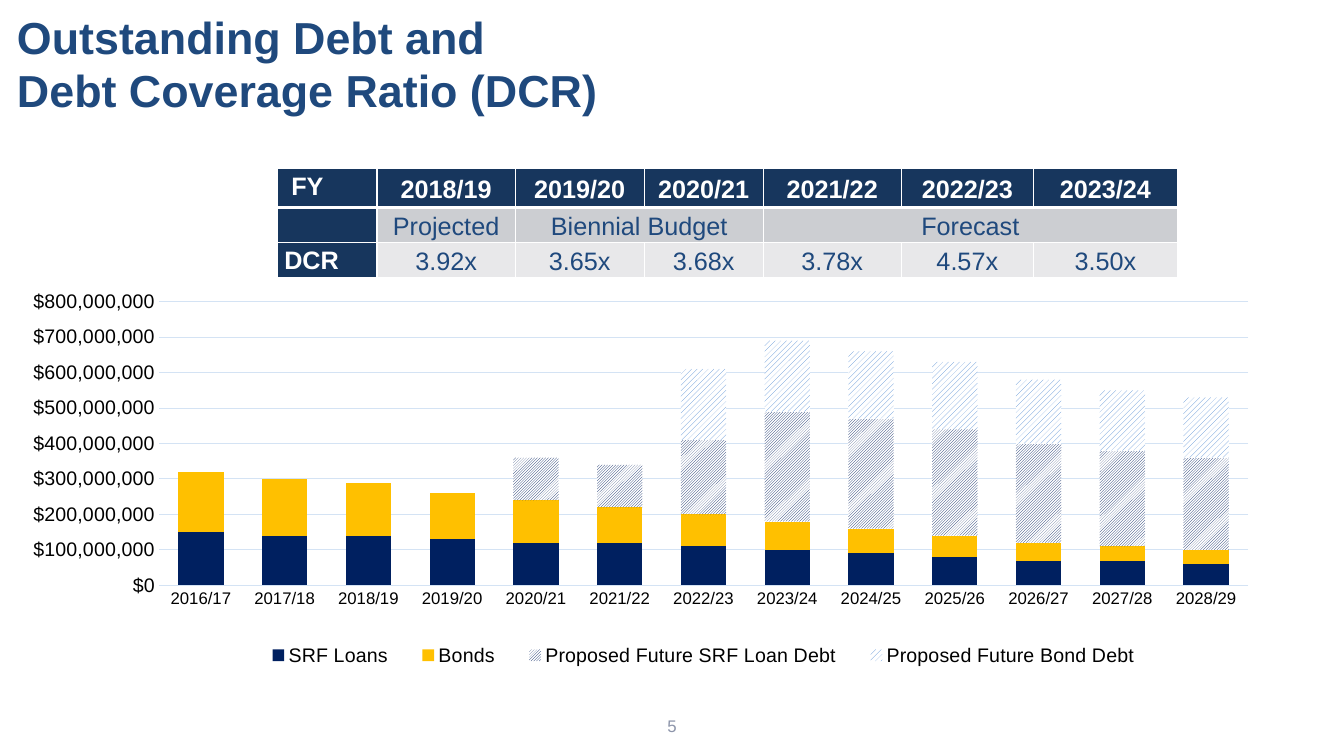
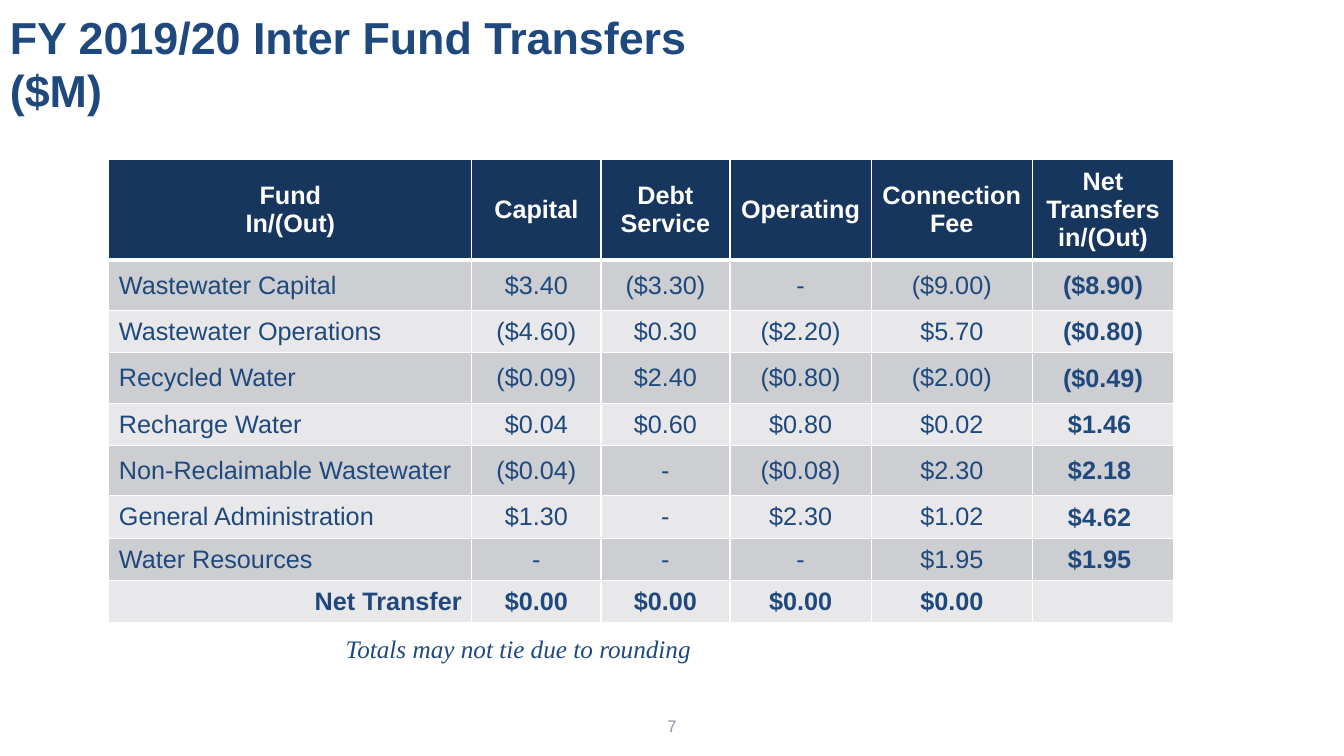
from pptx import Presentation
from pptx.chart.data import CategoryChartData
from pptx.dml.color import RGBColor
from pptx.enum.chart import XL_CHART_TYPE as Chart, XL_LEGEND_POSITION as LegendPos, XL_TICK_MARK as Tick
from pptx.enum.dml import MSO_PATTERN as Pattern
from pptx.enum.text import MSO_ANCHOR as Anchor, PP_ALIGN as Align
from pptx.oxml import parse_xml
from pptx.oxml.ns import nsdecls, qn
from pptx.util import Inches, Pt

COLORS = {
    "blue": "1F497D",
    "navy": "17365D",
    "white": "FFFFFF",
    "black": "000000",
    "band": "CCCED2",
    "light_band": "E8E8EA",
    "page_number": "8D95AA",
    "grid": "D4E3F4",
    "srf": "002060",
    "bonds": "FFC000",
    "future_bonds": "548DD4",
}
FONT = "Arial"
MILLION = 1_000_000

DCR_ROWS = [
    ["\N{NO-BREAK SPACE}FY", "2018/19", "2019/20", "2020/21", "2021/22", "2022/23", "2023/24"],
    ["", "Projected", "Biennial Budget", "", "Forecast", "", ""],
    ["DCR", "3.92x", "3.65x", "3.68x", "3.78x", "4.57x", "3.50x"],
]
TRANSFER_ROWS = [
    ["Fund\nIn/(Out)", "Capital", "Debt Service", "Operating", "Connection Fee", "Net Transfers in/(Out)"],
    ["Wastewater Capital", "$3.40", "($3.30)", "-", "($9.00)", "($8.90)"],
    ["Wastewater Operations", "($4.60)", "$0.30", "($2.20)", "$5.70", "($0.80)"],
    ["Recycled Water", "($0.09)", "$2.40", "($0.80)", "($2.00)", "($0.49)"],
    ["Recharge Water", "$0.04", "$0.60", "$0.80", "$0.02", "$1.46 "],
    ["Non-Reclaimable Wastewater", "($0.04)", "-", "($0.08)", "$2.30", "$2.18 "],
    ["General Administration", "$1.30", "-", "$2.30", "$1.02", "$4.62 "],
    ["Water Resources", "-", "-", "-", "$1.95", "$1.95 "],
    ["Net Transfer", "$0.00", "$0.00", "$0.00", "$0.00", ""],
]
DEBT = [
    ("SRF Loans", [150, 140, 140, 130, 120, 120, 110, 100, 90, 80, 70, 70, 60], "srf", None),
    ("Bonds", [170, 160, 150, 130, 120, 100, 90, 80, 70, 60, 50, 40, 40], "bonds", None),
    ("Proposed Future SRF Loan Debt",
     [0, 0, 0, 0, 120, 120, 210, 310, 310, 300, 280, 270, 260], "srf", Pattern.DARK_UPWARD_DIAGONAL),
    ("Proposed Future Bond Debt",
     [0, 0, 0, 0, 0, 0, 200, 200, 190, 190, 180, 170, 170], "future_bonds", Pattern.WIDE_UPWARD_DIAGONAL),
]


def rgb(name):
    return RGBColor.from_string(COLORS[name])


def style_font(font, size, color, bold=False, italic=False, name=FONT):
    font.name = name
    font.size = Pt(size)
    font.bold = bold
    font.italic = italic
    font.color.rgb = rgb(color)


def style_text(frame, align, size, color, **style):
    for paragraph in frame.paragraphs:
        paragraph.alignment = align
        style_font(paragraph.font, size, color, **style)
        for run in paragraph.runs:
            style_font(run.font, size, color, **style)


def add_text(slide, text, box, size, color, align=Align.LEFT, anchor=Anchor.MIDDLE, **style):
    frame = slide.shapes.add_textbox(*map(Inches, box)).text_frame
    frame.word_wrap = True
    frame.vertical_anchor = anchor
    frame.text = text
    style_text(frame, align, size, color, **style)


def add_page(deck, title, title_box, number):
    slide = deck.slides.add_slide(deck.slide_layouts[6])
    add_text(slide, title, title_box, 32, "blue", bold=True)
    add_text(slide, str(number), (5.11, 7, 3.11, 0.4), 12, "page_number", Align.CENTER)
    return slide


def set_borders(cell, bottom):
    for side in "LRTB":
        width = Pt(bottom if side == "B" else 1)
        cell._tc.get_or_add_tcPr().append(parse_xml(
            f'<a:ln{side} {nsdecls("a")} w="{width}"><a:solidFill>'
            f'<a:srgbClr val="{COLORS["white"]}"/></a:solidFill></a:ln{side}>'))


def set_margins(cell, side, top, bottom):
    cell.margin_left = cell.margin_right = Inches(side)
    cell.margin_top = Inches(top)
    cell.margin_bottom = Inches(bottom)


def style_cell(cell, color, bold=False, align=Align.CENTER):
    style_text(cell.text_frame, align, 18, color, bold=bold)


def add_grid(slide, left, top, widths, heights, rows):
    grid = slide.shapes.add_table(
        len(rows), len(widths), Inches(left), Inches(top),
        Inches(sum(widths)), Inches(sum(heights))).table
    for column, width in zip(grid.columns, widths):
        column.width = Inches(width)
    for r, (texts, height) in enumerate(zip(rows, heights)):
        grid.rows[r].height = Inches(height)
        fill = "navy" if r == 0 else ("light_band", "band")[r % 2]
        for cell, text in zip(grid.rows[r].cells, texts):
            set_borders(cell, bottom=3 if r == 0 else 1)
            cell.fill.solid()
            cell.fill.fore_color.rgb = rgb(fill)
            cell.vertical_anchor = Anchor.MIDDLE
            cell.text = text
            style_cell(cell, "white" if r == 0 else "blue", bold=r == 0)
    return grid


def add_dcr_table(slide):
    grid = add_grid(slide, 2.75, 1.67, [0.99, 1.37, 1.28, 1.18, 1.37, 1.31, 1.43],
                    [0.39, 0.32, 0.32], DCR_ROWS)
    for cell in grid.iter_cells():
        set_margins(cell, 0.07, 0, 0)
        cell.text_frame.paragraphs[0].line_spacing = 1.15
    for row in grid.rows:
        label = row.cells[0]
        label.fill.fore_color.rgb = rgb("navy")
        label.vertical_anchor = Anchor.TOP
        style_cell(label, "white", bold=True, align=Align.LEFT)
    for first, last in ((2, 3), (4, 6)):
        grid.cell(1, first).merge(grid.cell(1, last))


def add_transfer_table(slide):
    grid = add_grid(slide, 1.08, 1.58, [3.6, 1.28, 1.28, 1.4, 1.6, 1.4],
                    [0.94, 0.5, 0.42, 0.5, 0.42, 0.5, 0.42, 0.42, 0.42], TRANSFER_ROWS)
    *funds, total = list(grid.rows)[1:]
    for fund in funds:
        style_cell(fund.cells[0], "blue", align=Align.LEFT)
        net = fund.cells[5]
        set_margins(net, 0.01, 0.01, 0)
        style_cell(net, "blue", bold=True)
    for c, cell in enumerate(total.cells):
        style_cell(cell, "blue", bold=True, align=Align.CENTER if c else Align.RIGHT)


def place(element, index, x, y, w, h, target=""):
    for old in element.findall(qn("c:layout")):
        element.remove(old)
    element.insert(index, parse_xml(
        f'<c:layout {nsdecls("c")}><c:manualLayout>{target}'
        '<c:xMode val="edge"/><c:yMode val="edge"/>'
        f'<c:x val="{x}"/><c:y val="{y}"/><c:w val="{w}"/><c:h val="{h}"/>'
        '</c:manualLayout></c:layout>'))


def style_axis(axis, size):
    axis.major_tick_mark = axis.minor_tick_mark = Tick.NONE
    style_font(axis.tick_labels.font, size, "black")


def style_line(line):
    line.color.rgb = rgb("grid")
    line.width = Pt(0.75)


def add_debt_chart(slide):
    data = CategoryChartData(number_format='"$"#,##0')
    data.categories = [f"{year}/{year % 100 + 1}" for year in range(2016, 2029)]
    for name, millions, _, _ in DEBT:
        data.add_series(name, [value * MILLION for value in millions])
    chart = slide.shapes.add_chart(
        Chart.COLUMN_STACKED, *map(Inches, (0.33, 2.83, 12.17, 4.08)), data).chart
    style_font(chart.font, 12, "black")
    chart.has_title = False

    bars = chart.plots[0]
    bars.gap_width = 85
    bars.overlap = 100
    bars.vary_by_categories = False
    for series, (_, _, color, pattern) in zip(bars.series, DEBT):
        fill = series.format.fill
        if pattern is None:
            fill.solid()
        else:
            fill.patterned()
            fill.pattern = pattern
            fill.back_color.rgb = rgb("white")
        fill.fore_color.rgb = rgb(color)

    years, dollars = chart.category_axis, chart.value_axis
    style_axis(years, 12)
    style_line(years.format.line)
    style_axis(dollars, 14)
    dollars.format.line.fill.background()
    dollars.minimum_scale = 0
    dollars.maximum_scale = 800 * MILLION
    dollars.major_unit = 100 * MILLION
    dollars.tick_labels.number_format = '"$"#,##0'
    dollars.tick_labels.number_format_is_linked = False
    style_line(dollars.major_gridlines.format.line)

    chart.has_legend = True
    chart.legend.position = LegendPos.BOTTOM
    chart.legend.include_in_layout = False
    style_font(chart.legend.font, 14, "black")
    place(chart.element.xpath("c:chart/c:plotArea")[0], 0, 0.1, 0.04, 0.89, 0.69,
          '<c:layoutTarget val="inner"/>')
    place(chart.element.xpath("c:chart/c:legend")[0], 1, 0.17, 0.86, 0.75, 0.08)


def main():
    deck = Presentation()
    deck.slide_width = Inches(13.33)
    deck.slide_height = Inches(7.5)

    debt = add_page(deck, "Outstanding Debt and\vDebt Coverage Ratio (DCR)", (0.07, 0, 10.08, 1.25), 5)
    add_dcr_table(debt)
    add_debt_chart(debt)

    transfers = add_page(deck, "FY 2019/20 Inter Fund Transfers\v($M)", (0, 0, 12, 1.25), 7)
    add_transfer_table(transfers)
    add_text(transfers, "Totals may not tie due to rounding", (3.33, 6.23, 10, 0.4), 18, "blue",
             anchor=Anchor.TOP, italic=True, name="Times New Roman")

    deck.save("out.pptx")


if __name__ == "__main__":
    main()
